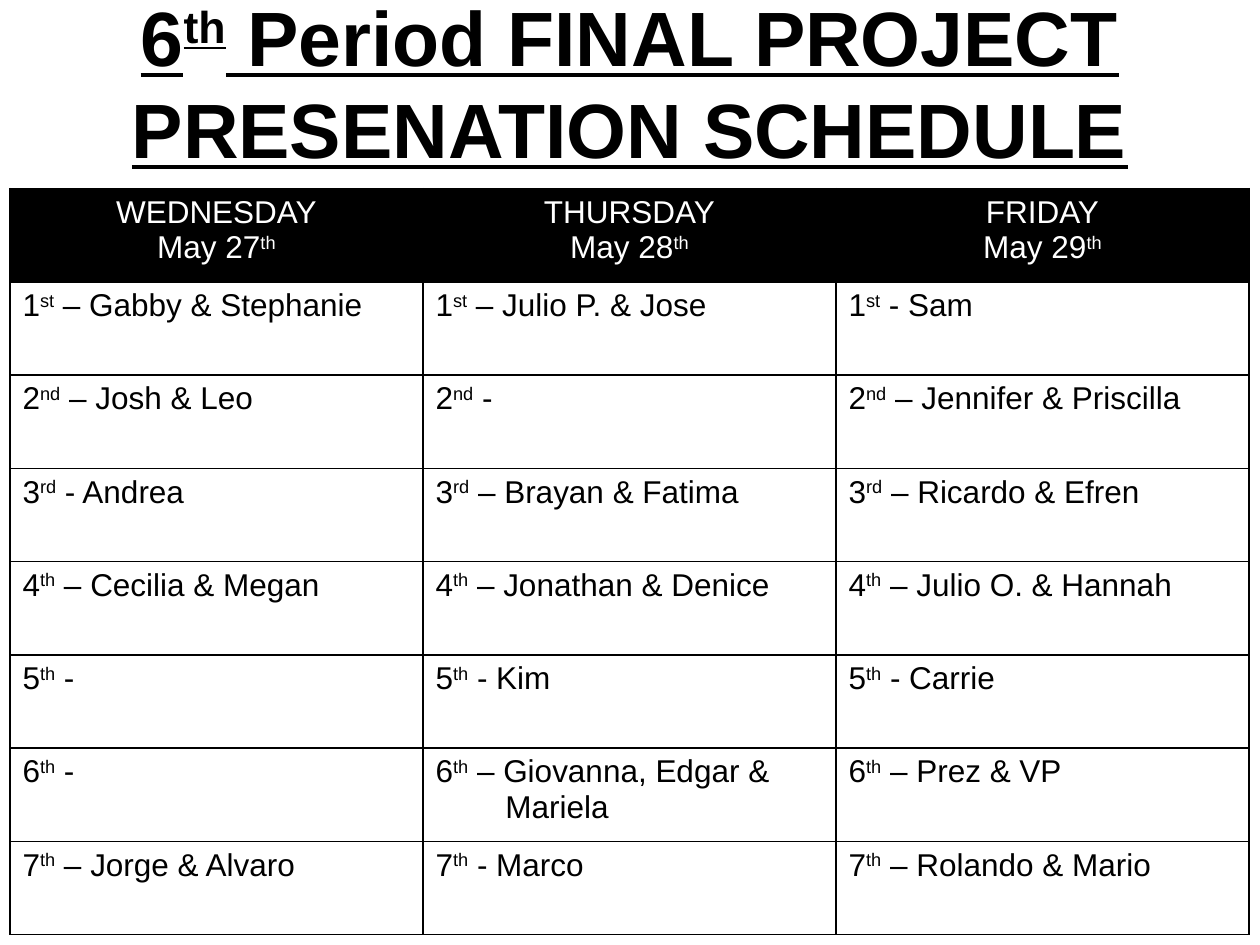
"""Build the sixth period presentation schedule slide."""
from dataclasses import dataclass
from typing import Optional

from lxml.etree import SubElement
from pptx import Presentation
from pptx.dml.color import RGBColor
from pptx.enum.text import MSO_ANCHOR, PP_ALIGN
from pptx.oxml.ns import qn
from pptx.util import Cm, Pt

INK = {"black": "000000", "white": "FFFFFF"}
HEAD = {"name": "Arial", "size": Pt(44), "bold": True, "underline": True}
BODY = {"name": "Arial", "size": Pt(18), "bold": False}
ENDS = ["st", "nd", "rd", "th", "th", "th", "th"]


@dataclass
class Day:
    name: str
    date: str
    slots: list[str]


DAYS = [
    Day("WEDNESDAY", "27", ["– Gabby & Stephanie", "– Josh & Leo", "- Andrea",
                            "– Cecilia & Megan", "-", "-", "– Jorge & Alvaro"]),
    Day("THURSDAY", "28", ["– Julio P. & Jose", "-", "– Brayan & Fatima",
                           "– Jonathan & Denice", "- Kim",
                           "– Giovanna, Edgar &\nMariela", "- Marco"]),
    Day("FRIDAY", "29", ["- Sam", "– Jennifer & Priscilla", "– Ricardo & Efren",
                         "– Julio O. & Hannah", "- Carrie", "– Prez & VP",
                         "– Rolando & Mario"]),
]


def write(para, parts: list[str], style: dict, ink: str,
          align: Optional[PP_ALIGN] = None) -> None:
    """Add runs to a paragraph, raising every second one."""
    para.alignment = align
    for i, text in enumerate(parts):
        run = para.add_run()
        run.text = text
        for key, value in style.items():
            setattr(run.font, key, value)
        run.font.color.rgb = RGBColor.from_string(INK[ink])
        if i % 2:
            run.font._element.set("baseline", "30000")


def frame(cell) -> None:
    """Draw a thin black line on each side of a cell."""
    props = cell._tc.get_or_add_tcPr()
    for side in ("lnL", "lnR", "lnT", "lnB"):
        line = SubElement(props, qn(f"a:{side}"), w=str(Pt(1)))
        fill = SubElement(line, qn("a:solidFill"))
        SubElement(fill, qn("a:srgbClr"), val=INK["black"])


def fill_day(grid, col: int, day: Day) -> None:
    """Write one day of the schedule down a column."""
    cells = [grid.cell(row, col) for row in range(len(ENDS) + 1)]
    for cell in cells:
        frame(cell)
        cell.fill.background()
    top = cells[0]
    top.fill.solid()
    top.fill.fore_color.rgb = RGBColor.from_string(INK["black"])
    text = top.text_frame
    write(text.paragraphs[0], [day.name], BODY, "white", PP_ALIGN.CENTER)
    write(text.add_paragraph(), [f"May {day.date}", "th"], BODY, "white",
          PP_ALIGN.CENTER)
    for num, (cell, end, slot) in enumerate(zip(cells[1:], ENDS, day.slots), 1):
        first, *rest = slot.split("\n")
        text = cell.text_frame
        write(text.paragraphs[0], [str(num), end, f" {first}"], BODY, "black")
        for extra in rest:
            para = text.add_paragraph()
            para._p.get_or_add_pPr().set("marL", str(Cm(1.41)))
            write(para, [extra], BODY, "black")


def main() -> None:
    """Build and save the slide."""
    deck = Presentation()
    deck.slide_width, deck.slide_height = Cm(25.4), Cm(19.05)
    slide = deck.slides.add_slide(deck.slide_layouts[5])
    title = slide.shapes.title
    place = {"left": Cm(0), "top": Cm(0.76), "width": Cm(25.4), "height": Cm(1.78)}
    for key, value in place.items():
        setattr(title, key, value)
    text = title.text_frame
    text.word_wrap = True
    text.vertical_anchor = MSO_ANCHOR.MIDDLE
    write(text.paragraphs[0], ["6", "th", " Period FINAL PROJECT"], HEAD, "black",
          PP_ALIGN.CENTER)
    write(text.add_paragraph(), ["PRESENATION SCHEDULE"], HEAD, "black",
          PP_ALIGN.CENTER)

    grid = slide.shapes.add_table(len(ENDS) + 1, len(DAYS), Cm(0.2), Cm(3.8),
                                  Cm(24.98), Cm(15.04)).table
    grid.first_row = grid.horz_banding = False
    for col, day in enumerate(DAYS):
        fill_day(grid, col, day)
    deck.save("out.pptx")


if __name__ == "__main__":
    main()
